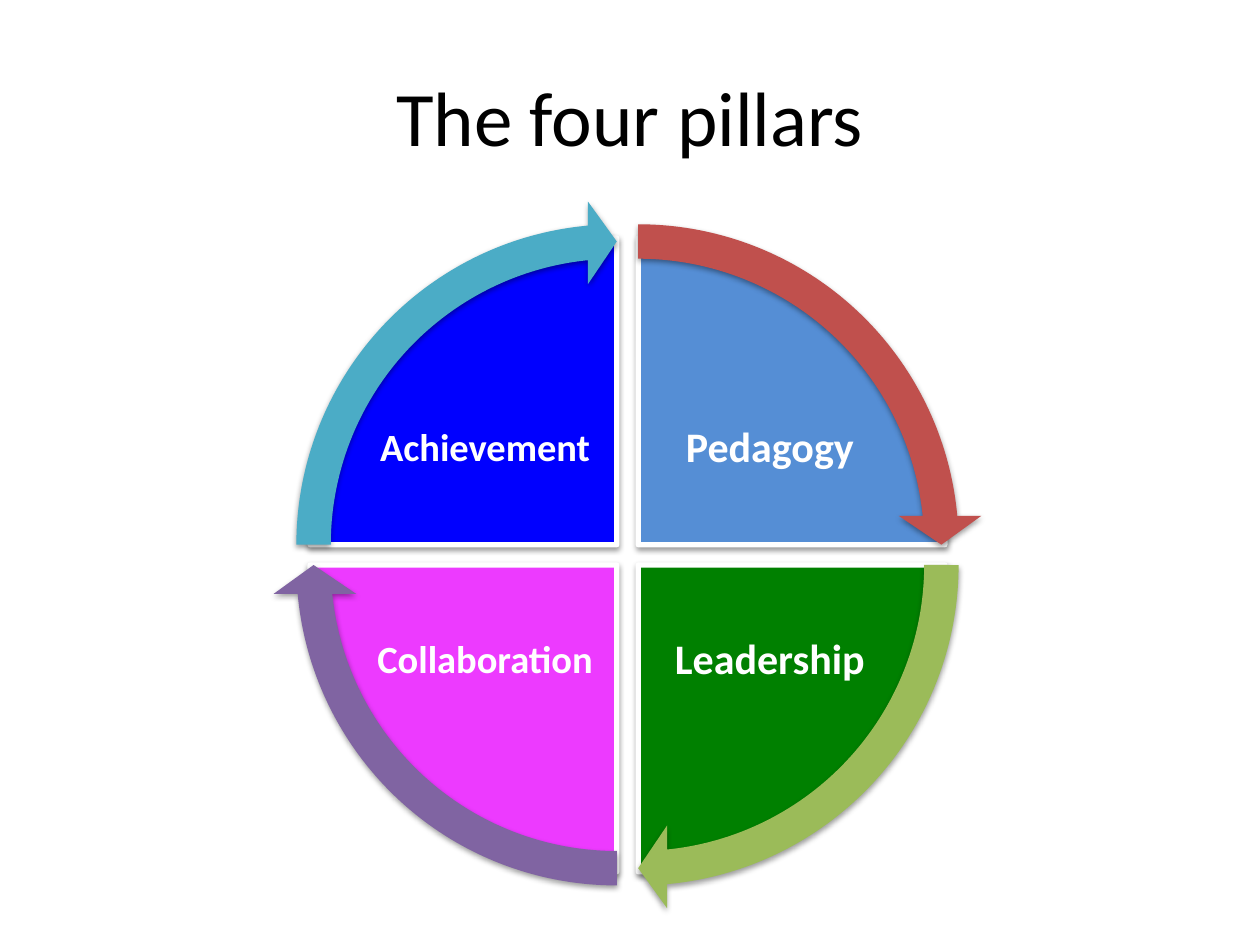
import dataclasses
import pptx
import pptx.dml.color
import pptx.enum.shapes
import pptx.enum.text
import pptx.oxml.ns
import pptx.util
import lxml.etree

Pt = pptx.util.Pt
SHAPE = pptx.enum.shapes.MSO_SHAPE
MIDDLE = pptx.enum.text.MSO_ANCHOR.MIDDLE
CENTER = pptx.enum.text.PP_ALIGN.CENTER


def color(value):
    return pptx.dml.color.RGBColor.from_string(value)


@dataclasses.dataclass(frozen=True)
class Theme:
    font: str = "Calibri"
    title_size: float = 44
    large_label: float = 24
    small_label: float = 22
    title: str = "000000"
    light: str = "FFFFFF"
    shadow: str = "000000"
    blue: str = "558ED5"
    green: str = "008000"
    magenta: str = "ED3AFF"
    deep_blue: str = "0000FF"
    red_arrow: str = "C0504D"
    green_arrow: str = "9BBB59"
    purple_arrow: str = "8064A2"
    teal_arrow: str = "4BACC6"


THEME = Theme()

PILLARS = [
    ("Pedagogy", THEME.large_label, THEME.blue, THEME.red_arrow, 1, -1, 162),
    ("Leadership", THEME.large_label, THEME.green, THEME.green_arrow, 1, 1, 0),
    ("Collaboration", THEME.small_label, THEME.magenta, THEME.purple_arrow, -1, 1, 54),
    ("Achievement", THEME.small_label, THEME.deep_blue, THEME.teal_arrow, -1, -1, 108),
]
QUARTER_TURN = 54
FULL_TURN = 216
ARROW_SWEEP = 50.72
PIE_SIZE = 350.6
ARROW_SIZE = 393.8
LABEL_SIZE = (129.6, 95.8)
QUADRANT_OFFSET = (6.1, 5.8)
LABEL_OFFSET = (81.4, 60.5)


def set_attributes(target, values):
    for name, value in values.items():
        setattr(target, name, value)


def write_text(shape, text, size, text_color, bold, margin):
    frame = shape.text_frame
    set_attributes(frame, {
        "text": text, "word_wrap": True, "vertical_anchor": MIDDLE,
        "margin_left": Pt(margin), "margin_right": Pt(margin),
        "margin_top": Pt(margin), "margin_bottom": Pt(margin),
    })
    paragraph = frame.paragraphs[0]
    paragraph.alignment = CENTER
    font = paragraph.runs[0].font
    set_attributes(font, {"name": THEME.font, "size": Pt(size), "bold": bold})
    font.color.rgb = color(text_color)
    return paragraph


def centered_box(center_x, center_y, width, height):
    return Pt(center_x - width / 2), Pt(center_y - height / 2), Pt(width), Pt(height)


def add_shadow(shape):
    shape.shadow.inherit = False
    qualified = pptx.oxml.ns.qn
    effects = shape._element.spPr.find(qualified("a:effectLst"))
    shadow = lxml.etree.SubElement(
        effects, qualified("a:outerShdw"), blurRad=str(Pt(3.15)),
        dist=str(Pt(1.57)), dir="5400000", rotWithShape="0")
    tint = lxml.etree.SubElement(shadow, qualified("a:srgbClr"), val=THEME.shadow)
    lxml.etree.SubElement(tint, qualified("a:alpha"), val="38000")


def add_round_shape(group, kind, center, size, fill, adjustments):
    shape = group.shapes.add_shape(kind, *centered_box(*center, size, size))
    for index, value in enumerate(adjustments):
        shape.adjustments[index] = value
    shape.fill.solid()
    shape.fill.fore_color.rgb = color(fill)
    shape.line.fill.background()
    add_shadow(shape)
    return shape


def build_title(slide, left, top, width, height):
    title = slide.shapes.title
    set_attributes(title, {"left": Pt(left), "top": Pt(top),
                           "width": Pt(width), "height": Pt(height)})
    write_text(title, "The four pillars", THEME.title_size, THEME.title, False, 3.6)


def build_cycle(slide, left, top, width, height):
    middle_x, middle_y = left + width / 2, top + height / 2
    group = slide.shapes.add_group_shape()

    def place(offset, side_x, side_y):
        return middle_x + side_x * offset[0], middle_y + side_y * offset[1]

    for text, size, fill, _, side_x, side_y, start in PILLARS:
        center = place(QUADRANT_OFFSET, side_x, side_y)
        end = (start + QUARTER_TURN) % FULL_TURN
        pie = add_round_shape(group, SHAPE.PIE, center, PIE_SIZE, fill, (start, end))
        pie.line.color.rgb = color(THEME.light)
        pie.line.width = Pt(3)
        label_center = place(LABEL_OFFSET, side_x, side_y)
        label = group.shapes.add_textbox(*centered_box(*label_center, *LABEL_SIZE))
        paragraph = write_text(label, text, size, THEME.light, True, 2.4)
        paragraph.line_spacing = 0.9

    for _, _, _, fill, side_x, side_y, start in PILLARS:
        center = place(QUADRANT_OFFSET, side_x, side_y)
        add_round_shape(group, SHAPE.CIRCULAR_ARROW, center, ARROW_SIZE, fill,
                        (0.05, 3.28, start + ARROW_SWEEP, start, 0.06))


def main():
    presentation = pptx.Presentation()
    set_attributes(presentation, {"slide_width": Pt(720), "slide_height": Pt(540)})
    slide = presentation.slides.add_slide(presentation.slide_layouts[5])
    build_title(slide, 54, 18, 612, 96)
    build_cycle(slide, 155.6, 114.4, 406, 405.4)
    presentation.save("out.pptx")


if __name__ == "__main__":
    main()
